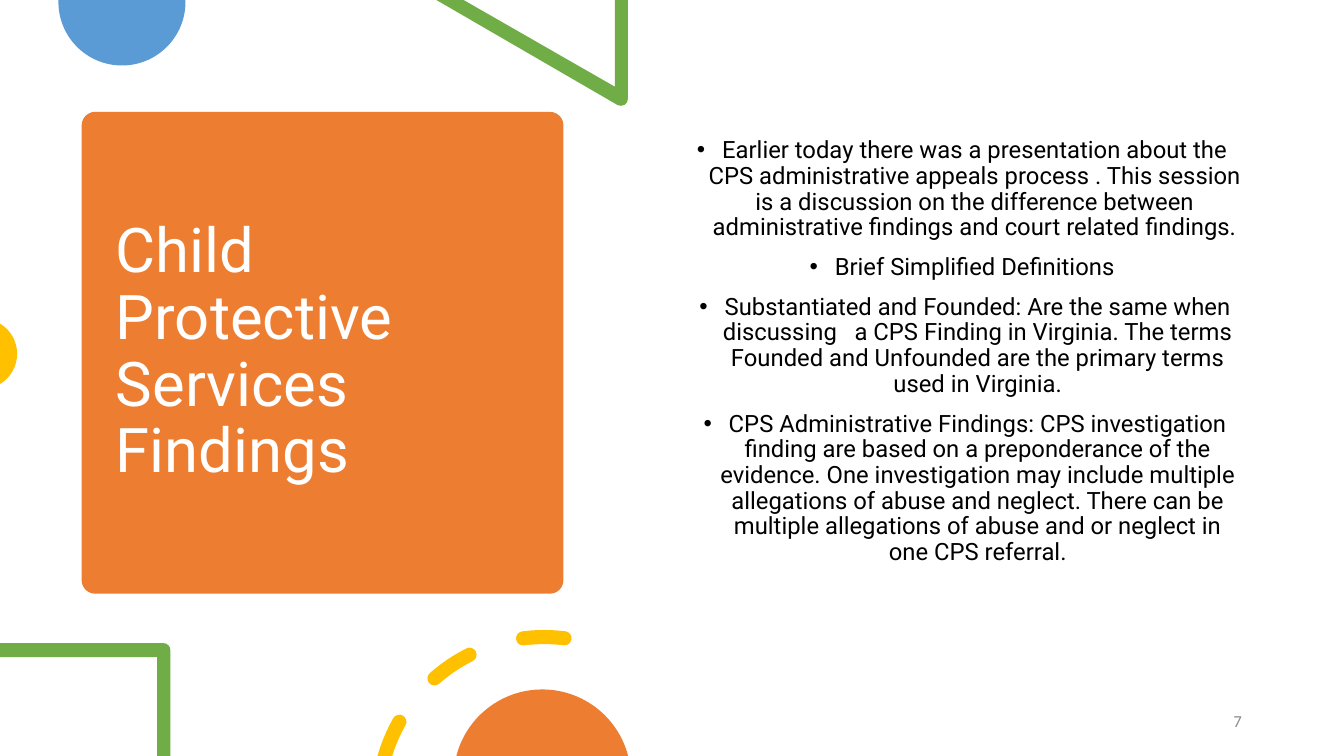
import math
from dataclasses import dataclass

import pptx
import pptx.dml.color
import pptx.enum.shapes
import pptx.enum.text
import pptx.oxml
import pptx.oxml.ns
import pptx.util

Inches = pptx.util.Inches
Pt = pptx.util.Pt
Align = pptx.enum.text.PP_ALIGN
Anchor = pptx.enum.text.MSO_ANCHOR
qn = pptx.oxml.ns.qn


@dataclass(frozen=True)
class Theme:
    orange: str = "ED7D31"
    blue: str = "5B9BD5"
    green: str = "70AD47"
    yellow: str = "FFC000"
    white: str = "FFFFFF"
    black: str = "000000"
    gray: str = "8C8C8C"
    text_font: str = "Roboto"
    number_font: str = "Calibri"
    title_size: float = 44
    body_size: float = 17
    number_size: float = 12


@dataclass(frozen=True)
class Box:
    left: float
    top: float
    width: float
    height: float

    def inset(self, horizontal, vertical):
        return Box(self.left + horizontal, self.top + vertical,
                   self.width - 2 * horizontal, self.height - 2 * vertical)

    def lengths(self):
        return [Inches(n) for n in (self.left, self.top, self.width, self.height)]


THEME = Theme()
TITLE = "Child Protective Services Findings"
FINDINGS = [
    (0.25, "Earlier today there was a presentation about the CPS administrative appeals process . "
           "This session is a discussion on the difference between administrative findings and "
           "court related findings."),
    (0.25, "Brief Simplified Definitions"),
    (0.31, "Substantiated and Founded: Are the same when discussing   a CPS Finding in Virginia. "
           "The terms Founded and Unfounded are the primary terms used in Virginia."),
    (0.31, "CPS Administrative Findings: CPS investigation finding are based on a preponderance of "
           "the evidence. One investigation may include multiple allegations of abuse and neglect. "
           "There can be multiple allegations of abuse and or neglect in one CPS referral."),
]


def paint(shape, color):
    shape.fill.solid()
    shape.fill.fore_color.rgb = pptx.dml.color.RGBColor.from_string(color)
    shape.line.fill.background()
    shape.shadow.inherit = False


def write(paragraph, text, size, font_name, color):
    run = paragraph.add_run()
    run.text = text
    run.font.size = Pt(size)
    run.font.name = font_name
    run.font.color.rgb = pptx.dml.color.RGBColor.from_string(color)


def place(shape, box, anchor):
    shape.left, shape.top, shape.width, shape.height = box.lengths()
    frame = shape.text_frame
    frame.word_wrap = True
    frame.auto_size = pptx.enum.text.MSO_AUTO_SIZE.NONE
    frame.vertical_anchor = anchor
    return frame


def on_circle(center, radius, degrees):
    angle = math.radians(degrees)
    return center[0] + radius * math.cos(angle), center[1] - radius * math.sin(angle)


def arc(center, radius, start, end):
    pieces = math.ceil(abs(end - start) / 95)
    step = (end - start) / pieces
    handle = 4 / 3 * math.tan(math.radians(step) / 4)
    reach = radius * math.hypot(1, handle)
    lean = math.degrees(math.atan(handle))
    steps = [[on_circle(center, radius, start)]]
    for index in range(pieces):
        first, last = start + index * step, start + (index + 1) * step
        steps.append([on_circle(center, reach, first + lean),
                      on_circle(center, reach, last - lean),
                      on_circle(center, radius, last)])
    return steps


def bend(shape, steps):
    lines = iter(list(shape.element.iter(qn("a:lnTo"))))
    for step in steps:
        group = [next(lines) for point in step]
        if len(group) == 3:
            curve = group[0].makeelement(qn("a:cubicBezTo"))
            group[0].addprevious(curve)
            for line in group:
                curve.append(line[0])
                line.getparent().remove(line)


def draw_outline(slide, box, contours, color):
    moved = [[[(Inches(box.left + x), Inches(box.top + y)) for x, y in step]
              for step in contour] for contour in contours]
    builder = slide.shapes.build_freeform(*moved[0][0][0], scale=1.0)
    for index, contour in enumerate(moved):
        if index:
            builder.move_to(*contour[0][0])
        builder.add_line_segments([point for step in contour[1:] for point in step], close=True)
    shape = builder.convert_to_shape()
    bend(shape, [step for contour in moved for step in contour[1:]])
    paint(shape, color)


def round_dash(center, radius, half, start, end):
    end_cap = arc(on_circle(center, radius, end), half, end, end + 180)
    start_cap = arc(on_circle(center, radius, start), half, start + 180, start + 360)
    return (arc(center, radius + half, start, end) + end_cap[1:]
            + arc(center, radius - half, end, start)[1:] + start_cap[1:])


def cut_dash(center, radius, half, start, bottom):
    def cut_angle(r):
        return 180 - math.degrees(math.asin((center[1] - bottom) / r))

    outer, inner = radius + half, radius - half
    cap = arc(on_circle(center, radius, start), half, start + 180, start + 360)
    return (arc(center, outer, start, cut_angle(outer))
            + arc(center, inner, cut_angle(inner), start) + cap[1:])


def add_top_ornaments(slide, box):
    draw_outline(slide, box, [arc((1.21, 0.02), 0.63, 178.2, 361.8)], THEME.blue)
    triangle = [[point] for point in [(6.23, 0), (6.1, 0), (6.1, 0.86), (4.6, 0), (4.33, 0)]]
    triangle += arc((6.16, 0.98), 0.07, 240, 360)
    draw_outline(slide, box, [triangle], THEME.green)


def add_left_ornament(slide, box):
    reach = math.degrees(math.acos(0.18 / 0.35))
    draw_outline(slide, box, [arc((-0.18, box.height / 2), 0.35, reach, -reach)], THEME.yellow)


def add_bottom_ornaments(slide, box):
    bottom = box.height
    corner = [[point] for point in
              [(0, 0.13), (0, 0.27), (1.56, 0.27), (1.56, bottom), (1.69, bottom)]]
    corner += arc((1.62, 0.2), 0.07, 0, 90)
    draw_outline(slide, box, [corner], THEME.green)

    ring = ((5.4, 1.72), 1.65, 0.07)
    dashes = [cut_dash(*ring, 150.6, bottom)]
    dashes += [round_dash(*ring, start, end) for start, end in [(116.7, 131.3), (83, 97.3)]]
    draw_outline(slide, box, dashes, THEME.yellow)

    edge = math.degrees(math.asin(0.22 / 0.88))
    draw_outline(slide, box, [arc((5.38, bottom + 0.22), 0.88, edge, 180 - edge)], THEME.orange)


def add_title_card(slide, box):
    card = slide.shapes.add_shape(pptx.enum.shapes.MSO_SHAPE.ROUNDED_RECTANGLE, *box.lengths())
    card.adjustments[0] = 0.028
    paint(card, THEME.orange)
    title = slide.shapes.title
    card.element.addnext(title.element)
    paragraph = place(title, box.inset(0.24, 0.11), Anchor.MIDDLE).paragraphs[0]
    paragraph.alignment = Align.LEFT
    paragraph.line_spacing = 0.9
    write(paragraph, TITLE, THEME.title_size, THEME.text_font, THEME.white)


def add_findings(slide, box):
    frame = place(slide.placeholders[1], box, Anchor.TOP)
    frame.margin_top = Inches(0.47)
    for index, (indent, text) in enumerate(FINDINGS):
        paragraph = frame.add_paragraph() if index else frame.paragraphs[0]
        properties = paragraph._p.get_or_add_pPr()
        properties.set("marL", str(Inches(indent)))
        properties.set("indent", str(Inches(-0.25)))
        for tag, name, value in [("a:buFont", "typeface", "Arial"), ("a:buChar", "char", "•")]:
            bullet = properties.makeelement(qn(tag), {name: value})
            properties.append(bullet)
        paragraph.alignment = Align.CENTER
        paragraph.line_spacing = 0.9
        paragraph.space_before = Pt(10 if index else 0)
        write(paragraph, text, THEME.body_size, THEME.text_font, THEME.black)


def add_slide_number(slide, box):
    shape = slide.shapes.add_textbox(*box.lengths())
    paragraph = place(shape, box, Anchor.MIDDLE).paragraphs[0]
    paragraph.alignment = Align.RIGHT
    write(paragraph, "7", THEME.number_size, THEME.number_font, THEME.gray)


presentation = pptx.Presentation()
presentation.slide_width, presentation.slide_height = Inches(40 / 3), Inches(7.5)
slide = presentation.slides.add_slide(presentation.slide_layouts[0])
add_title_card(slide, Box(0.81, 1.11, 4.78, 4.78))
add_top_ornaments(slide, Box(0, 0, 6.67, 1.11))
add_left_ornament(slide, Box(0, 1.11, 0.81, 4.8))
add_findings(slide, Box(6.67, 0.9, 5.75, 5.35))
add_bottom_ornaments(slide, Box(0, 6.25, 6.67, 1.25))
add_slide_number(slide, Box(11.49, 6.95, 0.93, 0.4))
presentation.save("out.pptx")
